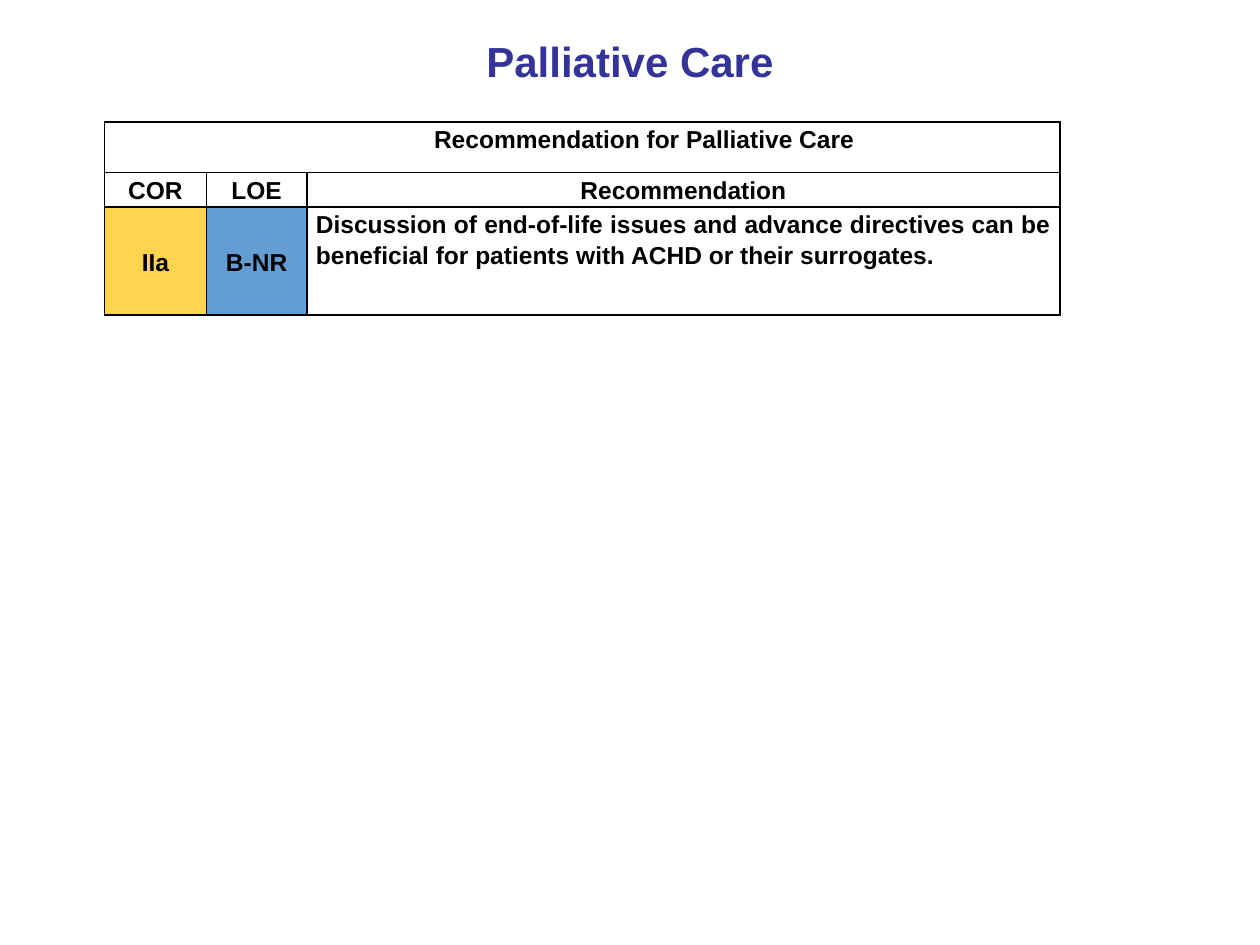
from lxml.etree import SubElement
from pptx import Presentation
from pptx.dml.color import RGBColor
from pptx.enum.text import MSO_ANCHOR as Anchor, PP_ALIGN as Align
from pptx.oxml.ns import qn
from pptx.util import Cm, Pt

TITLE = "Palliative Care"
HEADING = "Recommendation for Palliative Care"
ROWS = [
    (HEADING, "", ""),
    ("COR", "LOE", "Recommendation"),
    ("IIa", "B-NR",
     "Discussion of end-of-life issues and advance directives can be "
     "beneficial for patients with ACHD or their surrogates."),
]
COLORS = {"title": "333399", "text": "000000", "border": "000000",
          "IIa": "FFD54F", "B-NR": "649DD4"}
FONT = "Arial"
COLUMN_WIDTHS = [Cm(2.05), Cm(2.03), Cm(15.18)]
ROW_HEIGHTS = [Cm(1.02), Cm(0.69), Cm(2.18)]
HEADING_INDENT = Cm(2.5)


def style_paragraph(paragraph, size, color, align):
    paragraph.alignment = align
    for run in paragraph.runs:
        run.font.name = FONT
        run.font.size = Pt(size)
        run.font.bold = True
        run.font.color.rgb = RGBColor.from_string(COLORS[color])


def add_borders(cell):
    properties = cell._tc.get_or_add_tcPr()
    for side in ("lnL", "lnR", "lnT", "lnB"):
        line = SubElement(properties, qn(f"a:{side}"), w=str(Pt(1)))
        fill = SubElement(line, qn("a:solidFill"))
        SubElement(fill, qn("a:srgbClr"), val=COLORS["border"])


def fill_cell(cell, content, align):
    add_borders(cell)
    cell.margin_left = cell.margin_right = Cm(0.18)
    cell.margin_top = cell.margin_bottom = 0
    if content in COLORS:
        cell.fill.solid()
        cell.fill.fore_color.rgb = RGBColor.from_string(COLORS[content])
        cell.vertical_anchor = Anchor.MIDDLE
    else:
        cell.fill.background()
    cell.text_frame.text = content
    paragraph = cell.text_frame.paragraphs[0]
    paragraph.line_spacing = 1.15
    style_paragraph(paragraph, 14, "text", align)


def add_recommendation_table(slide):
    table = slide.shapes.add_table(
        len(ROWS), len(COLUMN_WIDTHS), Cm(2.11), Cm(2.46),
        sum(COLUMN_WIDTHS), sum(ROW_HEIGHTS)).table
    table.first_row = table.horz_banding = False
    for column, width in zip(table.columns, COLUMN_WIDTHS):
        column.width = width
    for row, height in zip(table.rows, ROW_HEIGHTS):
        row.height = height
    for r, contents in enumerate(ROWS):
        for c, content in enumerate(contents):
            is_advice = (r, c) == (2, 2)
            fill_cell(table.cell(r, c), content,
                      Align.JUSTIFY if is_advice else Align.CENTER)
    heading = table.cell(0, 0)
    heading.merge(table.cell(0, 2))
    heading_properties = heading.text_frame.paragraphs[0]._p.get_or_add_pPr()
    heading_properties.set("marL", str(HEADING_INDENT))


def main():
    presentation = Presentation()
    presentation.slide_width, presentation.slide_height = Cm(25.4), Cm(19.05)
    slide = presentation.slides.add_slide(presentation.slide_layouts[5])
    title = slide.shapes.title
    title.left, title.top = Cm(1.27), Cm(0.58)
    title.width, title.height = Cm(22.86), Cm(1.27)
    title.text_frame.text = TITLE
    title.text_frame.vertical_anchor = Anchor.MIDDLE
    style_paragraph(title.text_frame.paragraphs[0], 24, "title", Align.CENTER)
    add_recommendation_table(slide)
    presentation.save("out.pptx")


if __name__ == "__main__":
    main()
